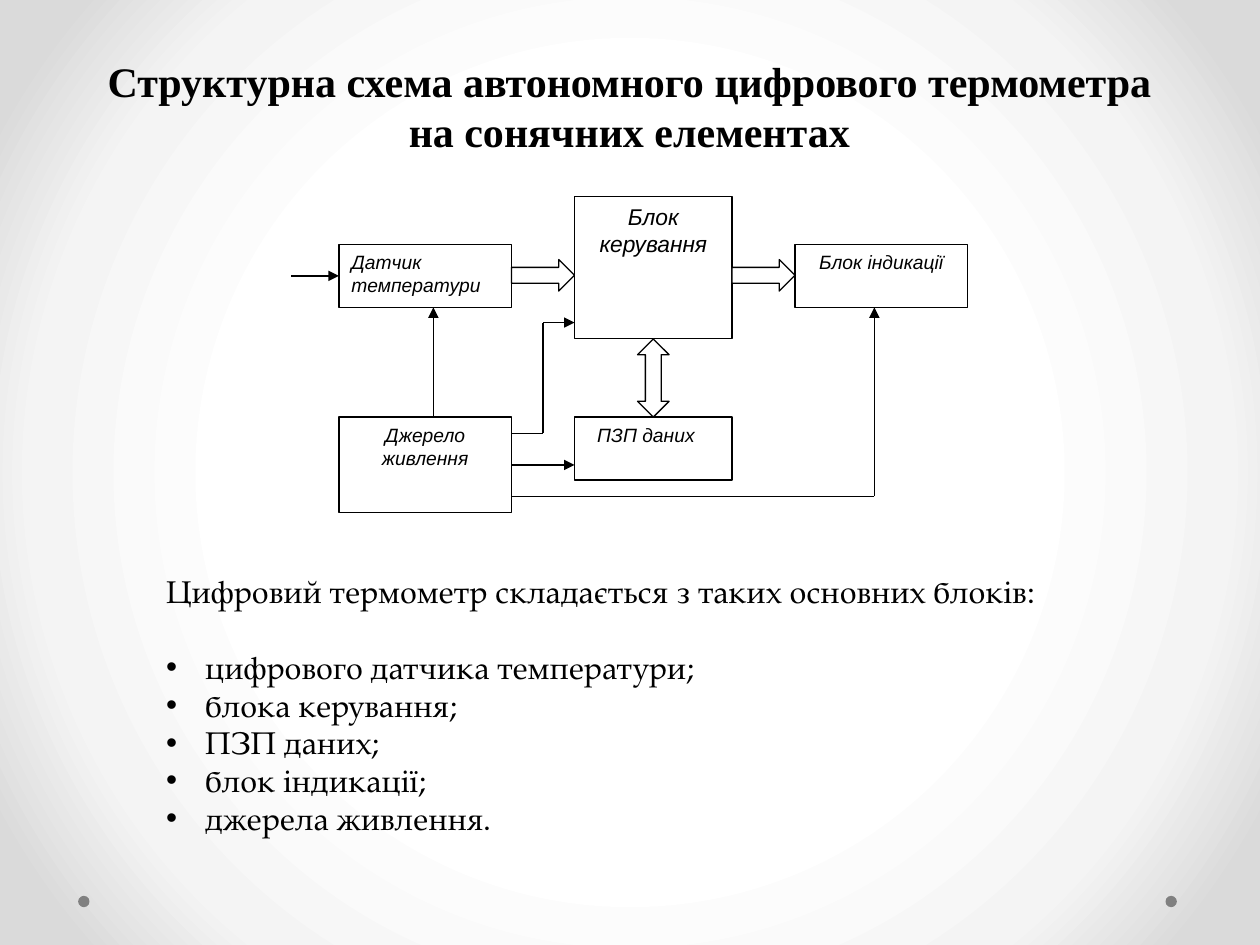
"""Builds a slide with the block diagram of a solar-powered digital thermometer."""
import lxml.etree
import pptx
import pptx.dml.color
import pptx.enum.shapes
import pptx.enum.text
import pptx.oxml
import pptx.oxml.ns
import pptx.util

Inches = pptx.util.Inches
Pt = pptx.util.Pt
MSO = pptx.enum.shapes.MSO_SHAPE
ALIGN = pptx.enum.text.PP_ALIGN
qn = pptx.oxml.ns.qn


def color(value):
    """Turn a hex string into a colour."""
    return pptx.dml.color.RGBColor.from_string(value)


def write(frame, lines, size, font, align=ALIGN.LEFT, bold=False, italic=False):
    """Fill a text frame with formatted paragraphs and return them."""
    frame.word_wrap = True
    frame.vertical_anchor = pptx.enum.text.MSO_ANCHOR.TOP
    frame.text = "\n".join(lines)
    for paragraph in frame.paragraphs:
        paragraph.alignment = align
        style = paragraph.runs[0].font
        style.size, style.name = Pt(size), font
        style.bold, style.italic = bold, italic
        style.color.rgb = color("000000")
    return frame.paragraphs


prs = pptx.Presentation()
prs.slide_width, prs.slide_height = Inches(10), Inches(7.5)
slide = prs.slides.add_slide(prs.slide_layouts[6])

backdrop = slide.background.fill
backdrop.gradient()
gradient = slide.background._cSld.find(".//" + qn("a:gradFill"))
for child in list(gradient):
    gradient.remove(child)
stops = lxml.etree.SubElement(gradient, qn("a:gsLst"))
for position, shade in ((50, "FFFFFF"), (76, "F4F4F4"), (92, "DADADA")):
    stop = lxml.etree.SubElement(stops, qn("a:gs"), pos=str(position * 1000))
    lxml.etree.SubElement(stop, qn("a:srgbClr"), val=shade)
focus = lxml.etree.SubElement(gradient, qn("a:path"), path="circle")
lxml.etree.SubElement(focus, qn("a:fillToRect"), l="50000", t="50000", r="50000", b="50000")

for left in (9.25, 0.62):
    dot = slide.shapes.add_shape(MSO.OVAL, Inches(left), Inches(7.11), Inches(0.09), Inches(0.09))
    dot.shadow.inherit = False
    dot.fill.solid()
    dot.fill.fore_color.rgb = color("808080")
    dot.line.fill.background()

title = slide.shapes.add_textbox(Inches(0.62), Inches(0.39), Inches(8.75), Inches(0.91))
write(title.text_frame, ["Структурна схема автономного цифрового термометра на сонячних елементах"],
      24, "Times New Roman", align=ALIGN.CENTER, bold=True)

diagram = slide.shapes.add_group_shape().shapes
parts = [
    ("Датчик температури", MSO.RECTANGLE, 2.69, 1.94, 1.37, 0.5, 11, ALIGN.LEFT),
    ("Блок керування", MSO.RECTANGLE, 4.56, 1.56, 1.25, 1.13, 13, ALIGN.CENTER),
    ("Блок індикації", MSO.RECTANGLE, 6.31, 1.94, 1.37, 0.5, 11, ALIGN.CENTER),
    ("Джерело живлення", MSO.RECTANGLE, 2.69, 3.31, 1.37, 0.76, 11, ALIGN.CENTER),
    ("ПЗП даних", MSO.RECTANGLE, 4.56, 3.31, 1.25, 0.5, 11, ALIGN.LEFT),
    ("", MSO.UP_DOWN_ARROW, 5.06, 2.69, 0.25, 0.62, 11, ALIGN.CENTER),
    ("", MSO.RIGHT_ARROW, 4.06, 2.06, 0.5, 0.25, 11, ALIGN.CENTER),
    ("", MSO.RIGHT_ARROW, 5.81, 2.06, 0.5, 0.25, 11, ALIGN.CENTER),
]
blocks = {}
for label, kind, left, top, width, height, size, align in parts:
    block = diagram.add_shape(kind, Inches(left), Inches(top), Inches(width), Inches(height))
    block.shadow.inherit = False
    block.fill.solid()
    block.fill.fore_color.rgb = color("FFFFFF")
    block.line.color.rgb = color("000000")
    block.line.width = Pt(0.75)
    if label:
        write(block.text_frame, [label], size, "Arial", align=align, italic=True)
        blocks[label] = block
blocks["ПЗП даних"].text_frame.margin_left = Inches(0.18)

routes = [
    [(2.31, 2.19), (2.69, 2.19)],
    [(4.06, 3.94), (6.94, 3.94), (6.94, 2.44)],
    [(4.06, 3.69), (4.56, 3.69)],
    [(4.06, 3.44), (4.31, 3.44), (4.31, 2.56), (4.56, 2.56)],
    [(3.44, 3.31), (3.44, 2.44)],
]
signals = []
for route in routes:
    for start, end in zip(route, route[1:]):
        signal = diagram.add_connector(pptx.enum.shapes.MSO_CONNECTOR.STRAIGHT,
                                       *map(Inches, start + end))
        signal.line.color.rgb = color("000000")
        signal.line.width = Pt(0.75)
        if end == route[-1]:
            lxml.etree.SubElement(signal.line._get_or_add_ln(), qn("a:tailEnd"), type="triangle")
        lxml.etree.SubElement(signal._element.spPr, qn("a:effectLst"))
    signals.append(signal)
signals[0].end_connect(blocks["Датчик температури"], 1)
signals[2].begin_connect(blocks["Джерело живлення"], 3)

summary = slide.shapes.add_textbox(Inches(1.22), Inches(4.49), Inches(7.81), Inches(2.22))
intro, *items = write(summary.text_frame, [
    "Цифровий термометр складається з таких основних блоків:",
    "цифрового датчика температури;",
    "блока керування;",
    "ПЗП даних;",
    "блок індикації;",
    "джерела живлення.",
], 18, "TeX Gyre Pagella")
intro.space_after = Pt(21.7)
for item in items:
    properties = item._p.get_or_add_pPr()
    properties.set("marL", str(Inches(0.31)))
    properties.set("indent", str(Inches(-0.31)))
    lxml.etree.SubElement(properties, qn("a:buFont"), typeface="Arial")
    lxml.etree.SubElement(properties, qn("a:buChar"), char="•")

prs.save("out.pptx")
